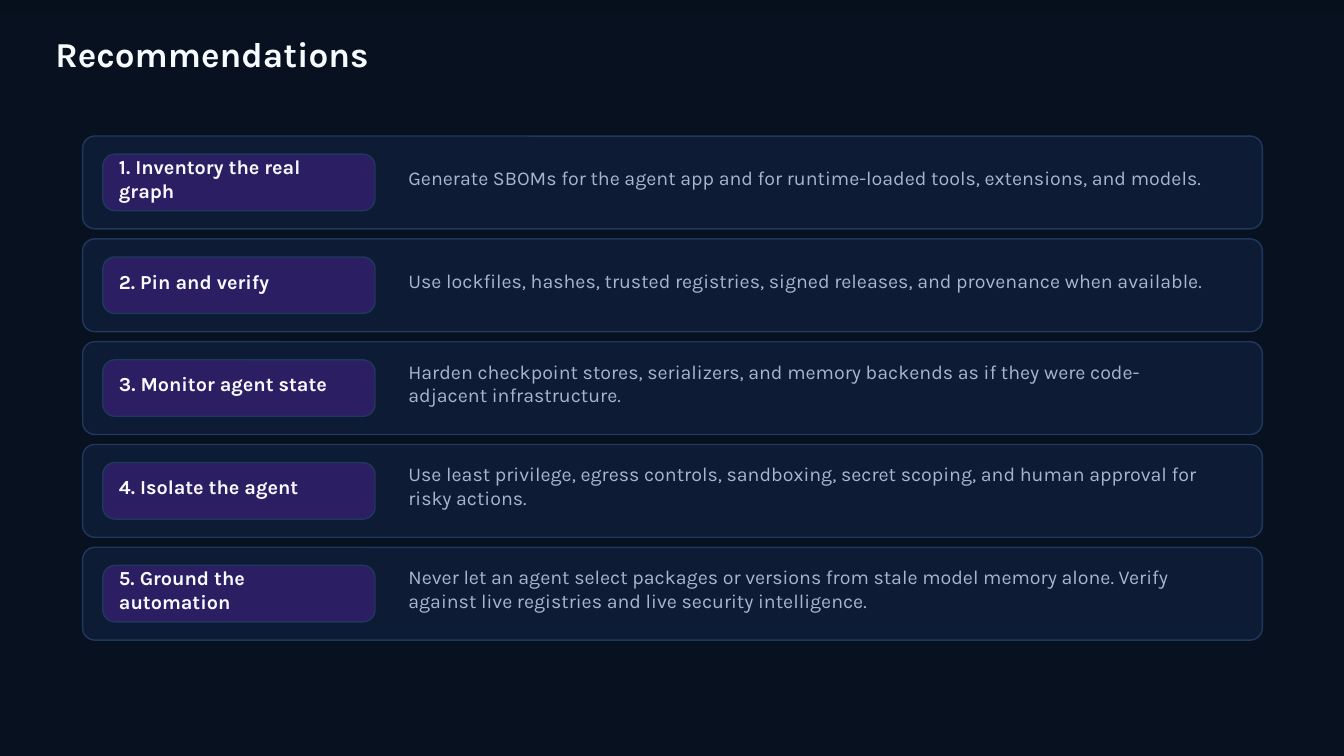
from pptx import Presentation
from pptx.dml.color import RGBColor as RGB
from pptx.enum.shapes import MSO_SHAPE as Shape
from pptx.enum.text import MSO_ANCHOR as Anchor
from pptx.util import Inches, Pt

WIDTH, HEIGHT = 13.33, 7.5
FONT = "Karla"
COLORS = {
    "edge": "06101D",
    "page": "07111F",
    "card": "0D1B34",
    "label": "2B1E62",
    "line": "20385E",
    "white": "F7FAFF",
    "muted": "A8B6CC",
}
STEPS = [
    ("Inventory the real graph",
     "Generate SBOMs for the agent app and for runtime-loaded tools, extensions, and models."),
    ("Pin and verify",
     "Use lockfiles, hashes, trusted registries, signed releases, and provenance when available."),
    ("Monitor agent state",
     "Harden checkpoint stores, serializers, and memory backends as if they were "
     "code-adjacent infrastructure."),
    ("Isolate the agent",
     "Use least privilege, egress controls, sandboxing, secret scoping, and human approval "
     "for risky actions."),
    ("Ground the automation",
     "Never let an agent select packages or versions from stale model memory alone. "
     "Verify against live registries and live security intelligence."),
]
TOP, PITCH = 1.35, 1.02


class Deck:
    def __init__(self):
        self.show = Presentation()
        self.show.slide_width = Inches(WIDTH)
        self.show.slide_height = Inches(HEIGHT)
        self.slide = self.show.slides.add_slide(self.show.slide_layouts[6])
        fill = self.slide.background.fill
        fill.solid()
        fill.fore_color.rgb = self.color("page")

    def color(self, name):
        return RGB.from_string(COLORS[name])

    def box(self, left, top, width, height, fill, line, radius=None):
        kind = Shape.ROUNDED_RECTANGLE if radius else Shape.RECTANGLE
        box = self.slide.shapes.add_shape(
            kind, Inches(left), Inches(top), Inches(width), Inches(height))
        if radius:
            box.adjustments[0] = radius / height
        box.shadow.inherit = False
        box.fill.solid()
        box.fill.fore_color.rgb = self.color(fill)
        box.line.color.rgb = self.color(line)
        box.line.width = Pt(1)

    def text(self, left, top, width, height, words, size, color, bold=False):
        box = self.slide.shapes.add_textbox(
            Inches(left), Inches(top), Inches(width), Inches(height))
        frame = box.text_frame
        frame.word_wrap = True
        frame.vertical_anchor = Anchor.MIDDLE
        frame.margin_left = frame.margin_right = 0
        frame.margin_top = frame.margin_bottom = 0
        para = frame.paragraphs[0]
        para.text = words
        font = para.font
        font.name, font.size, font.bold = FONT, Pt(size), bold
        font.color.rgb = self.color(color)

    def step(self, top, title, detail):
        self.box(0.82, top, 11.7, 0.92, "card", "line", 0.12)
        self.box(1.02, top + 0.18, 2.7, 0.56, "label", "line", 0.12)
        self.text(1.18, top + 0.34, 2.35, 0.16, title, 14.2, "white", True)
        self.text(4.05, top + 0.24, 7.95, 0.34, detail, 14, "muted")


def main():
    deck = Deck()
    deck.box(0, 0, WIDTH, HEIGHT, "edge", "edge")
    deck.box(0, 0.14, WIDTH, HEIGHT - 0.14, "page", "page")
    deck.text(0.55, 0.32, 10.9, 0.42, "Recommendations", 25, "white", True)
    for row, (title, detail) in enumerate(STEPS):
        deck.step(TOP + row * PITCH, f"{row + 1}. {title}", detail)
    deck.show.save("out.pptx")


if __name__ == "__main__":
    main()
